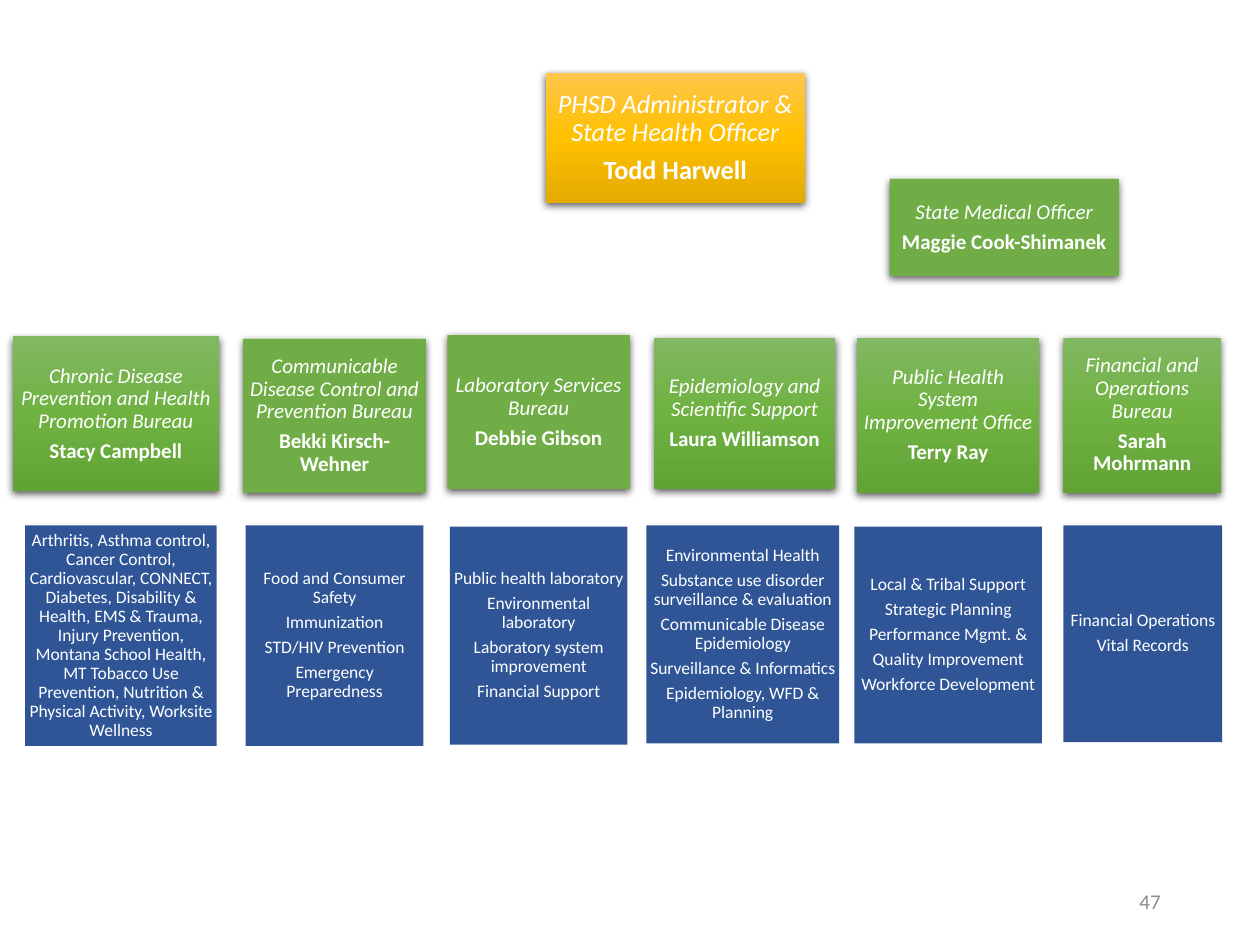
from lxml.etree import SubElement
from pptx import Presentation
from pptx.dml.color import RGBColor
from pptx.enum.shapes import MSO_SHAPE as Shape
from pptx.enum.text import MSO_ANCHOR as Anchor, PP_ALIGN as Align
from pptx.oxml.ns import qn
from pptx.util import Inches, Pt

CELL = 0.1  # the page is a grid of 100 columns by 75 rows
GREEN, BLUE = "70AD47", "2F5597"
GREEN_FADE = ("81B861", "6FB242", "62A336")
GOLD_FADE = ("FFC64B", "FFC000", "E3AB00")

# bureau box, fill, title, head, programs box, programs
BUREAUS = [
    ((1, 26.7, 16.4, 12.3), GREEN_FADE,
     "Chronic Disease Prevention and Health Promotion Bureau", "Stacy Campbell",
     (2, 41.7, 15.2, 17.5),
     ["Arthritis, Asthma control, Cancer Control, Cardiovascular, CONNECT, "
      "Diabetes, Disability & Health, EMS & Trauma, Injury Prevention, "
      "Montana School Health, MT Tobacco Use Prevention, Nutrition & "
      "Physical Activity, Worksite Wellness"]),
    ((19.3, 26.9, 14.5, 12.2), GREEN,
     "Communicable Disease Control and Prevention Bureau", "Bekki Kirsch-Wehner",
     (19.5, 41.7, 14.1, 17.5),
     ["Food and Consumer Safety", "Immunization", "STD/HIV Prevention",
      "Emergency Preparedness"]),
    ((35.5, 26.6, 14.5, 12.2), GREEN,
     "Laboratory Services Bureau", "Debbie Gibson",
     (35.7, 41.8, 14.1, 17.3),
     ["Public health laboratory", "Environmental laboratory",
      "Laboratory system improvement", "Financial Support"]),
    ((51.9, 26.8, 14.4, 12), GREEN_FADE,
     "Epidemiology and Scientific Support", "Laura Williamson",
     (51.3, 41.7, 15.3, 17.3),
     ["Environmental Health", "Substance use disorder surveillance & evaluation",
      "Communicable Disease Epidemiology", "Surveillance & Informatics",
      "Epidemiology, WFD & Planning"]),
    ((68, 26.8, 14.5, 12.3), GREEN_FADE,
     "Public Health System Improvement Office", "Terry Ray",
     (67.8, 41.8, 14.9, 17.2),
     ["Local & Tribal Support", "Strategic Planning", "Performance Mgmt. &",
      "Quality Improvement", "Workforce Development"]),
    ((84.4, 26.8, 12.5, 12.3), GREEN_FADE,
     "Financial and Operations Bureau", "Sarah Mohrmann",
     (84.4, 41.7, 12.6, 17.2),
     ["Financial Operations", "Vital Records"]),
]


def color(hex_code):
    return RGBColor.from_string(hex_code)


def place(box):
    """Turn grid columns and rows into lengths."""
    return [Inches(cells * CELL) for cells in box]


def paint(shape, fill):
    """Fill with one colour, or with a vertical fade of several."""
    if isinstance(fill, str):
        shape.fill.solid()
        shape.fill.fore_color.rgb = color(fill)
        return
    shape.fill.gradient()
    shape.fill.gradient_angle = 270
    stops = shape._element.spPr.find(".//" + qn("a:gsLst"))
    for stop in list(stops):
        stops.remove(stop)
    for index, hex_code in enumerate(fill):
        position = index * 100000 // (len(fill) - 1)
        stop = SubElement(stops, qn("a:gs"), pos=str(position))
        SubElement(stop, qn("a:srgbClr"), val=hex_code)


def cast_shadow(shape):
    effects = shape._element.spPr.find(qn("a:effectLst"))
    shadow = SubElement(effects, qn("a:outerShdw"), blurRad=str(Pt(4.5)),
                        dist=str(Pt(1.5)), dir="5400000", algn="ctr", rotWithShape="0")
    tint = SubElement(shadow, qn("a:srgbClr"), val="000000")
    SubElement(tint, qn("a:alpha"), val="63000")


def add_panel(page, box, fill, lines, size, inset):
    panel = page.shapes.add_shape(Shape.RECTANGLE, *place(box))
    panel.shadow.inherit = False
    panel.line.fill.background()
    paint(panel, fill)
    frame = panel.text_frame
    frame.word_wrap = True
    frame.vertical_anchor = Anchor.MIDDLE
    frame.margin_left = frame.margin_right = Inches(inset)
    frame.margin_top = frame.margin_bottom = Inches(inset)
    frame.text = "\n".join(lines)
    for para in frame.paragraphs:
        para.alignment = Align.CENTER
        para.line_spacing = 0.9
        para.space_after = Pt(round(size * 0.35, 1))
        for span in para.runs:
            span.font.name, span.font.size = "Calibri", Pt(size)
            span.font.color.rgb = color("FFFFFF")
    return panel


def add_post(page, box, fill, title, person, size=12):
    """A raised box with a post in italics over its holder in bold."""
    panel = add_panel(page, box, fill, [title, person], size, 0.04)
    cast_shadow(panel)
    post, holder = panel.text_frame.paragraphs
    post.runs[0].font.italic = True
    holder.runs[0].font.bold = True


def add_page_number(page, box, number):
    label = page.shapes.add_textbox(*place(box))
    frame = label.text_frame
    frame.word_wrap = True
    frame.vertical_anchor = Anchor.MIDDLE
    frame.text = number
    para = frame.paragraphs[0]
    para.alignment = Align.RIGHT
    font = para.runs[0].font
    font.name, font.size = "Calibri", Pt(12)
    font.color.rgb = color("8C8C8C")


def main():
    deck = Presentation()
    deck.slide_width, deck.slide_height = place((100, 75))
    page = deck.slides.add_slide(deck.slide_layouts[6])
    add_post(page, (43.3, 5.8, 20.6, 10.3), GOLD_FADE,
             "PHSD Administrator & State Health Officer", "Todd Harwell", 15)
    add_post(page, (70.6, 14.2, 18.2, 7.7), GREEN,
             "State Medical Officer", "Maggie Cook-Shimanek")
    for post_box, fill, title, person, programs_box, programs in BUREAUS:
        add_post(page, post_box, fill, title, person)
        add_panel(page, programs_box, BLUE, programs, 10, 0.01)
    add_page_number(page, (70.6, 69.5, 22.5, 4), "47")
    deck.save("out.pptx")


if __name__ == "__main__":
    main()
